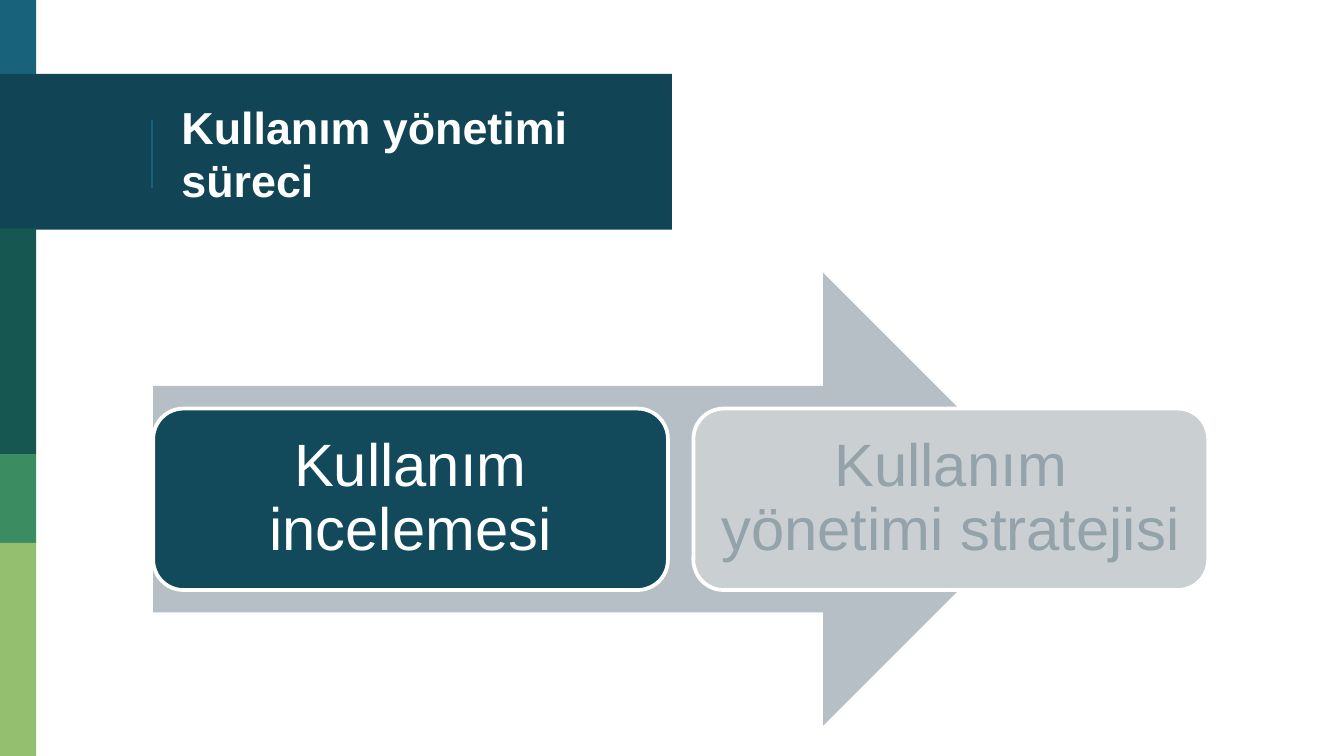
from lxml.etree import SubElement
from pptx import Presentation
from pptx.dml.color import RGBColor
from pptx.enum.shapes import MSO_CONNECTOR, MSO_SHAPE
from pptx.enum.text import MSO_ANCHOR, PP_ALIGN
from pptx.oxml.ns import qn
from pptx.util import Inches, Pt

WHITE = RGBColor(0xFF, 0xFF, 0xFF)
BLUE = RGBColor(0x18, 0x63, 0x7B)
NAVY = RGBColor(0x11, 0x44, 0x54)
PINE = RGBColor(0x16, 0x57, 0x51)
GREEN = RGBColor(0x3B, 0x8D, 0x61)
LIME = RGBColor(0x94, 0xBF, 0x6E)
STEEL = RGBColor(0xB5, 0xBF, 0xC5)
TEAL = RGBColor(0x12, 0x49, 0x5B)
PALE = RGBColor(0xCA, 0xCF, 0xD1)
GRAY = RGBColor(0x93, 0xA3, 0xA9)

BANDS = [
    (0, 0.27, 0.58, BLUE),
    (0.55, 5, 1.16, NAVY),
    (1.7, 0.27, 1.68, PINE),
    (3.38, 0.27, 0.66, GREEN),
    (4.04, 0.27, 1.59, LIME),
]
STEPS = [
    ("Kullanım incelemesi", TEAL, WHITE),
    ("Kullanım yönetimi stratejisi", PALE, GRAY),
]
LEFT = 1.14
PITCH = 4.02


def add_block(slide, kind, box, fill):
    block = slide.shapes.add_shape(kind, *map(Inches, box))
    block.shadow.inherit = False
    block.fill.solid()
    block.fill.fore_color.rgb = fill
    block.line.fill.background()
    return block


def set_text(shape, text, size, color, inset, align, space, bold=False):
    frame = shape.text_frame
    frame.text = text
    frame.word_wrap = True
    frame.vertical_anchor = MSO_ANCHOR.MIDDLE
    frame.margin_left = frame.margin_right = Inches(inset)
    frame.margin_top = frame.margin_bottom = Inches(inset)
    para = frame.paragraphs[0]
    para.alignment = align
    para.line_spacing = space
    font = para.runs[0].font
    font.name = "Arial"
    font.size = Pt(size)
    font.bold = bold
    font.color.rgb = color


def add_rule(slide):
    ends = map(Inches, (1.13, 0.89, 1.13, 1.4))
    rule = slide.shapes.add_connector(MSO_CONNECTOR.STRAIGHT, *ends)
    rule.line.color.rgb = BLUE
    rule.line.width = Pt(0.75)
    SubElement(rule._element.spPr, qn("a:effectLst"))


def set_title(slide, text):
    title = slide.shapes.title
    title.left, title.top = Inches(1.25), Inches(0.58)
    title.width, title.height = Inches(3.51), Inches(1.12)
    set_text(title, text, 24, WHITE, 0.1, PP_ALIGN.LEFT, 1.0, True)
    slide.shapes._spTree.append(title._element)


def add_step(slide, left, text, fill, color):
    box = (left, 3.04, 3.83, 1.35)
    card = add_block(slide, MSO_SHAPE.ROUNDED_RECTANGLE, box, fill)
    card.line.color.rgb = WHITE
    card.line.width = Pt(2)
    set_text(card, text, 32, color, 0.13, PP_ALIGN.CENTER, 0.9)


def main():
    deck = Presentation()
    deck.slide_width = Inches(10)
    deck.slide_height = Inches(10) * 9 // 16
    slide = deck.slides.add_slide(deck.slide_layouts[5])
    for top, width, height, fill in BANDS:
        add_block(slide, MSO_SHAPE.RECTANGLE, (0, top, width, height), fill)
    add_rule(slide)
    set_title(slide, "Kullanım yönetimi süreci")
    add_block(slide, MSO_SHAPE.RIGHT_ARROW, (LEFT, 2.03, 6.67, 3.37), STEEL)
    for i, step in enumerate(STEPS):
        add_step(slide, LEFT + i * PITCH, *step)
    deck.save("out.pptx")


if __name__ == "__main__":
    main()
